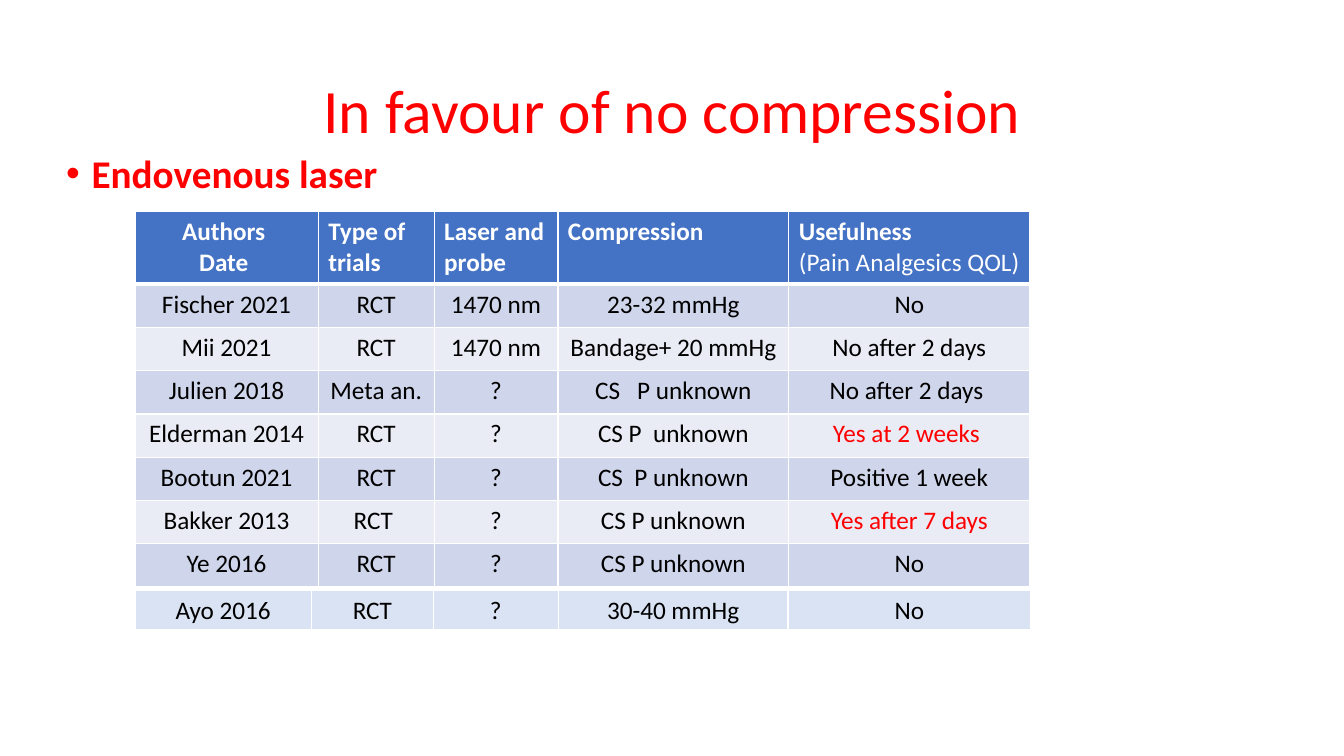
from dataclasses import dataclass
from typing import Any

import lxml.etree
import pptx
import pptx.dml.color
import pptx.enum.text
import pptx.oxml.ns
import pptx.util

Cm = pptx.util.Cm
Pt = pptx.util.Pt
RGB = pptx.dml.color.RGBColor
ALIGN = pptx.enum.text.PP_ALIGN
ANCHOR = pptx.enum.text.MSO_ANCHOR
qn = pptx.oxml.ns.qn


@dataclass(frozen=True)
class Theme:
    font: str = "Calibri"
    title_size: int = 44
    bullet_size: int = 28
    cell_size: int = 18
    red: str = "FF0000"
    black: str = "000000"
    white: str = "FFFFFF"
    header_fill: str = "4472C4"
    band_fills: tuple[str, str] = ("CFD5EA", "E9EBF5")
    extra_fill: str = "DAE3F3"


THEME = Theme()


@dataclass(frozen=True)
class Line:
    text: str
    size: int = THEME.cell_size
    color: str = THEME.black
    bold: bool = False
    align: Any = ALIGN.CENTER


@dataclass(frozen=True)
class Row:
    cells: list[list[Line]]
    height: float
    fill: str
    bottom_border: float = 1


@dataclass(frozen=True)
class TrialTable:
    left: float
    top: float
    widths: list[float]
    rows: list[Row]


def header(text: str, align: Any = ALIGN.LEFT, bold: bool = True) -> Line:
    return Line(text, color=THEME.white, bold=bold, align=align)


HEADER = Row(
    [
        [header("Authors ", ALIGN.CENTER), header("Date ", ALIGN.CENTER)],
        [header("Type of trials")],
        [header("Laser and probe")],
        [header("Compression")],
        [header("Usefulness"), header("(Pain Analgesics QOL)", bold=False)],
    ],
    height=1.83,
    fill=THEME.header_fill,
    bottom_border=3,
)

TRIALS = [
    ("Fischer 2021", "RCT", "1470 nm", "23-32 mmHg", "No"),
    ("Mii 2021", "RCT", "1470 nm", "Bandage+ 20 mmHg", "No after 2 days"),
    ("Julien 2018", "Meta an.", "?", "CS   P unknown", "No after 2 days "),
    ("Elderman 2014", "RCT", "?", "CS P  unknown", "Yes at 2 weeks "),
    ("Bootun 2021", "RCT", "?", "CS  P unknown", "Positive 1 week"),
    ("Bakker 2013", "RCT ", "?", "CS P unknown", "Yes after 7 days"),
    ("Ye 2016", "RCT", "?", "CS P unknown", "No"),
]
EXTRA_TRIAL = ("Ayo 2016", "RCT", "?", "30-40 mmHg", "No")


def trial_row(trial: tuple[str, ...], height: float, fill: str, bottom_border: float = 1) -> Row:
    """Centre each value and set the findings that favour compression in red."""
    cells = [
        [Line(value, color=THEME.red if value.startswith("Yes") else THEME.black)]
        for value in trial
    ]
    return Row(cells, height, fill, bottom_border)


TABLES = [
    TrialTable(
        3.4, 5.33, [4.62, 2.92, 3.12, 5.82, 6.07],
        [HEADER] + [
            trial_row(trial, 1.09, THEME.band_fills[index % 2])
            for index, trial in enumerate(TRIALS)
        ],
    ),
    TrialTable(
        3.4, 14.88, [4.45, 3.07, 3.15, 5.79, 6.12],
        [trial_row(EXTRA_TRIAL, 1, THEME.extra_fill, bottom_border=3)],
    ),
]


def apply(target: Any, formats: dict[str, Any]) -> None:
    for attribute, value in formats.items():
        setattr(target, attribute, value)


def write_line(paragraph: Any, line: Line) -> None:
    paragraph.alignment = line.align
    run = paragraph.add_run()
    run.text = line.text
    apply(run.font, {"name": THEME.font, "size": Pt(line.size), "bold": line.bold})
    run.font.color.rgb = RGB.from_string(line.color)


def add_text(slide: Any, box: tuple[float, ...], line: Line, anchor: Any) -> Any:
    frame = slide.shapes.add_textbox(*map(Cm, box)).text_frame
    apply(frame, {"word_wrap": True, "vertical_anchor": anchor})
    paragraph = frame.paragraphs[0]
    paragraph.line_spacing = 0.9
    write_line(paragraph, line)
    return paragraph


def add_bullet(paragraph: Any) -> None:
    paragraph.space_before = Pt(10)
    properties = paragraph._p.get_or_add_pPr()
    indent = Cm(0.64)
    properties.set("marL", str(indent))
    properties.set("indent", str(-indent))
    lxml.etree.SubElement(properties, qn("a:buFont"), typeface="Arial")
    lxml.etree.SubElement(properties, qn("a:buChar"), char="•")


def add_borders(cell: Any, bottom: float) -> None:
    properties = cell._tc.get_or_add_tcPr()
    for side, width in {"L": 1, "R": 1, "T": 1, "B": bottom}.items():
        border = lxml.etree.SubElement(properties, qn(f"a:ln{side}"), w=str(Pt(width)))
        fill = lxml.etree.SubElement(border, qn("a:solidFill"))
        lxml.etree.SubElement(fill, qn("a:srgbClr"), val=THEME.white)


def fill_cell(cell: Any, lines: list[Line], row: Row) -> None:
    add_borders(cell, row.bottom_border)
    cell.fill.solid()
    cell.fill.fore_color.rgb = RGB.from_string(row.fill)
    frame = cell.text_frame
    for index, line in enumerate(lines):
        write_line(frame.add_paragraph() if index else frame.paragraphs[0], line)


def add_trial_table(slide: Any, trials: TrialTable) -> None:
    table = slide.shapes.add_table(
        len(trials.rows), len(trials.widths), Cm(trials.left), Cm(trials.top),
        Cm(sum(trials.widths)), Cm(sum(row.height for row in trials.rows)),
    ).table
    apply(table, {"first_row": False, "horz_banding": False})
    for column, width in zip(table.columns, trials.widths):
        column.width = Cm(width)
    for table_row, row in zip(table.rows, trials.rows):
        table_row.height = Cm(row.height)
        for cell, lines in zip(table_row.cells, row.cells):
            fill_cell(cell, lines, row)


def main() -> None:
    deck = pptx.Presentation()
    apply(deck, {"slide_width": Cm(33.87), "slide_height": Cm(19.05)})
    slide = deck.slides.add_slide(deck.slide_layouts[6])
    add_text(
        slide, (2.34, 1.02, 29.21, 3.68),
        Line("In favour of no compression", THEME.title_size, THEME.red), ANCHOR.MIDDLE,
    )
    technique = add_text(
        slide, (1.42, 3.76, 29.97, 12.09),
        Line("Endovenous laser", THEME.bullet_size, THEME.red, True, ALIGN.LEFT), ANCHOR.TOP,
    )
    add_bullet(technique)
    for trials in TABLES:
        add_trial_table(slide, trials)
    deck.save("out.pptx")


if __name__ == "__main__":
    main()
